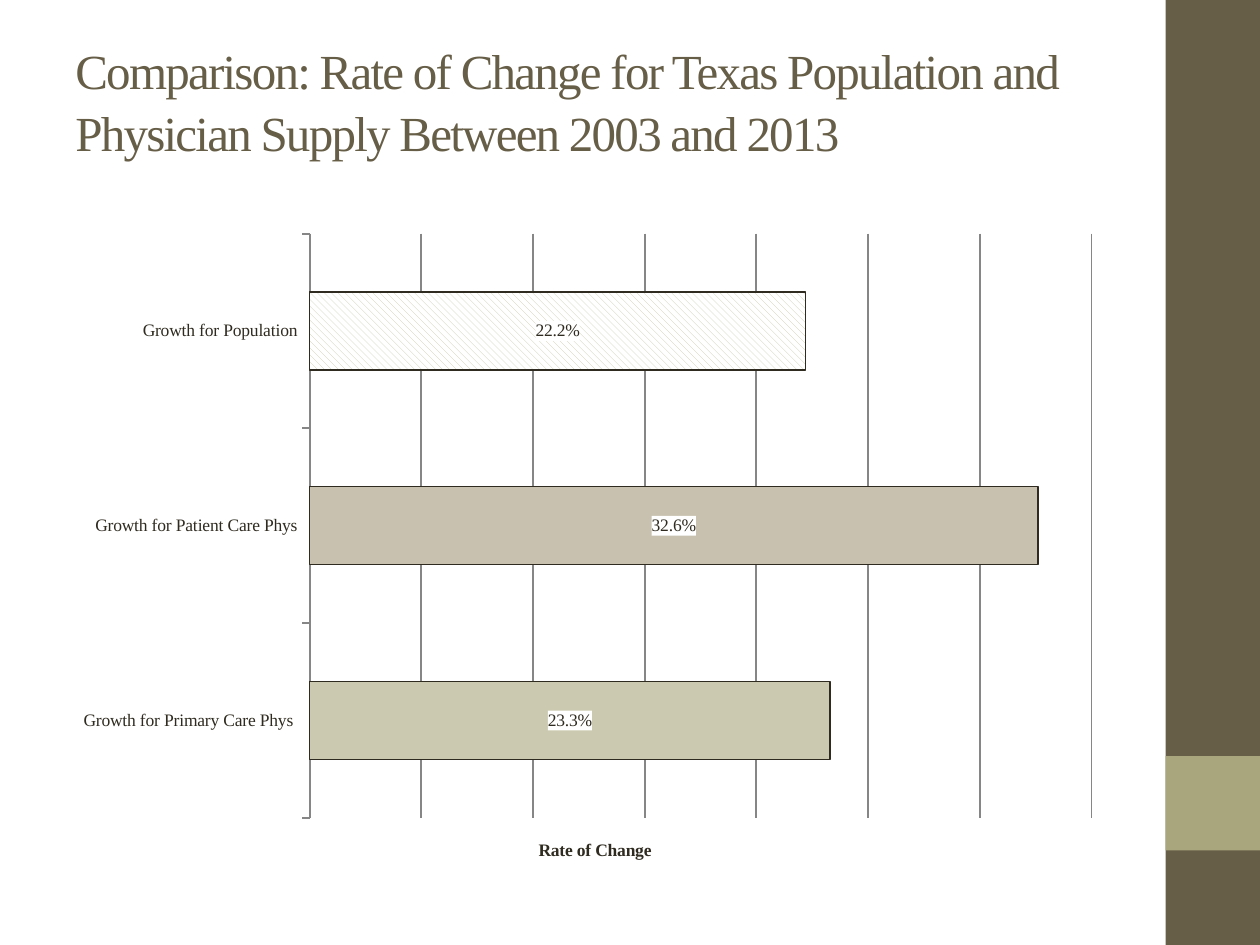
from typing import NamedTuple, Optional

from lxml.etree import SubElement
from pptx import Presentation
from pptx.chart.data import CategoryChartData as Data
from pptx.dml.color import RGBColor as RGB
from pptx.enum.chart import XL_CHART_TYPE as Kind, XL_TICK_MARK as Tick
from pptx.enum.dml import MSO_PATTERN as Pattern
from pptx.enum.shapes import MSO_SHAPE as Form
from pptx.enum.text import MSO_ANCHOR as Anchor
from pptx.oxml import parse_xml
from pptx.oxml.ns import nsdecls, qn
from pptx.util import Inches, Pt

OLIVE = RGB(0x67, 0x5E, 0x47)
SAGE = RGB(0xA9, 0xA5, 0x7C)
INK = RGB(0x2F, 0x2B, 0x20)
GRID = RGB(0x86, 0x86, 0x86)
PALE = RGB(0xCB, 0xC9, 0xB0)
SAND = RGB(0xC8, 0xC1, 0xAF)
WHITE = RGB(0xFF, 0xFF, 0xFF)
SERIF = "Times New Roman"


class Band(NamedTuple):
    top: float
    height: float
    color: RGB


class Bar(NamedTuple):
    name: str
    rate: float
    color: Optional[RGB]


BANDS = [Band(0, 7.5, OLIVE), Band(6, 0.75, SAGE)]
BARS = [
    Bar("Growth for Primary Care Phys ", 0.233, PALE),
    Bar("Growth for Patient Care Phys", 0.326, SAND),
    Bar("Growth for Population", 0.222, None),
]


def draw_band(slide, band: Band) -> None:
    shape = slide.shapes.add_shape(
        Form.RECTANGLE, Inches(9.25), Inches(band.top), Inches(0.75), Inches(band.height)
    )
    shape.shadow.inherit = False
    shape.fill.solid()
    shape.fill.fore_color.rgb = band.color
    shape.line.fill.background()


def draw_title(slide, text: str) -> None:
    box = slide.shapes.add_textbox(Inches(0.5), Inches(0.3), Inches(8.33), Inches(1.25))
    frame = box.text_frame
    frame.word_wrap = True
    frame.vertical_anchor = Anchor.TOP
    frame.margin_top = 0
    frame.text = text
    para = frame.paragraphs[0]
    para.line_spacing = 1.05
    run = para.runs[0]
    set_font(run.font, 28, OLIVE)
    run.font._element.set("spc", "-100")


def set_font(font, size: float, color: RGB) -> None:
    font.name = SERIF
    font.size = Pt(size)
    font.color.rgb = color


def set_line(line, color: RGB, width: float) -> None:
    line.color.rgb = color
    line.width = Pt(width)


def place(parent, index: int, **sides: float) -> None:
    for old in parent.findall(qn("c:layout")):
        parent.remove(old)
    layout = parse_xml(f"<c:layout {nsdecls('c')}/>")
    manual = SubElement(layout, qn("c:manualLayout"))
    if "w" in sides:
        SubElement(manual, qn("c:layoutTarget")).set("val", "inner")
    for side in "xy":
        SubElement(manual, qn(f"c:{side}Mode")).set("val", "edge")
    for side, value in sides.items():
        SubElement(manual, qn(f"c:{side}")).set("val", str(value))
    parent.insert(index, layout)


def paint(bar: Bar, point) -> None:
    fill = point.format.fill
    if bar.color is None:
        fill.patterned()
        fill.pattern = Pattern.WIDE_DOWNWARD_DIAGONAL
        fill.fore_color.rgb = PALE
        fill.back_color.rgb = WHITE
    else:
        fill.solid()
        fill.fore_color.rgb = bar.color
    set_line(point.format.line, INK, 0.75)


def set_labels(plot_row) -> None:
    labels = plot_row.data_labels
    labels.show_value = True
    labels.number_format = "0.0%"
    labels.number_format_is_linked = False
    set_font(labels.font, 10, INK)
    back = parse_xml(
        f"<c:spPr {nsdecls('c', 'a')}><a:solidFill>"
        f'<a:srgbClr val="{WHITE}"/></a:solidFill></c:spPr>'
    )
    labels._element.find(qn("c:txPr")).addprevious(back)


def set_axes(chart) -> None:
    names = chart.category_axis
    names.major_tick_mark = Tick.OUTSIDE
    names.has_major_gridlines = False
    set_font(names.tick_labels.font, 10, INK)
    set_line(names.format.line, GRID, 1)

    rates = chart.value_axis
    rates.visible = False
    rates.minimum_scale = 0
    rates.maximum_scale = 0.35
    rates.major_unit = 0.05
    rates.has_major_gridlines = True
    set_line(rates.major_gridlines.format.line, GRID, 1)
    rates.tick_labels.number_format = "0.0%"
    rates.tick_labels.number_format_is_linked = False
    title = rates.axis_title
    title.text_frame.text = "Rate of Change"
    font = title.text_frame.paragraphs[0].runs[0].font
    set_font(font, 10, INK)
    font.bold = True
    place(title._element, 1, x=0.45, y=0.93)


def draw_chart(slide, bars: list[Bar]) -> None:
    data = Data(number_format="0.0%")
    data.categories = [bar.name for bar in bars]
    data.add_series("Series 1", [bar.rate for bar in bars])
    chart = slide.shapes.add_chart(
        Kind.BAR_STACKED, Inches(0.5), Inches(1.75), Inches(8.33), Inches(5.25), data
    ).chart
    chart.has_title = False
    chart.has_legend = False
    chart.font.name = "Calibri"
    chart.font.size = Pt(10)
    chart.font.color.rgb = INK
    plot = chart.plots[0]
    plot.gap_width = 150
    plot.overlap = 100
    plot.vary_by_categories = False
    row = plot.series[0]
    row.format.fill.solid()
    row.format.fill.fore_color.rgb = SAGE
    set_line(row.format.line, INK, 0.75)
    for index, bar in enumerate(bars):
        paint(bar, row.points[index])
    set_labels(row)
    set_axes(chart)
    area = chart._chartSpace.find(".//" + qn("c:plotArea"))
    place(area, 0, x=0.235, y=0.02, w=0.745, h=0.883)


def main() -> None:
    deck = Presentation()
    deck.slide_width = Inches(10)
    deck.slide_height = Inches(7.5)
    slide = deck.slides.add_slide(deck.slide_layouts[6])
    for band in BANDS:
        draw_band(slide, band)
    draw_title(
        slide,
        "Comparison: Rate of Change for Texas Population and "
        "Physician Supply Between 2003 and 2013",
    )
    draw_chart(slide, BARS)
    deck.save("out.pptx")


if __name__ == "__main__":
    main()
